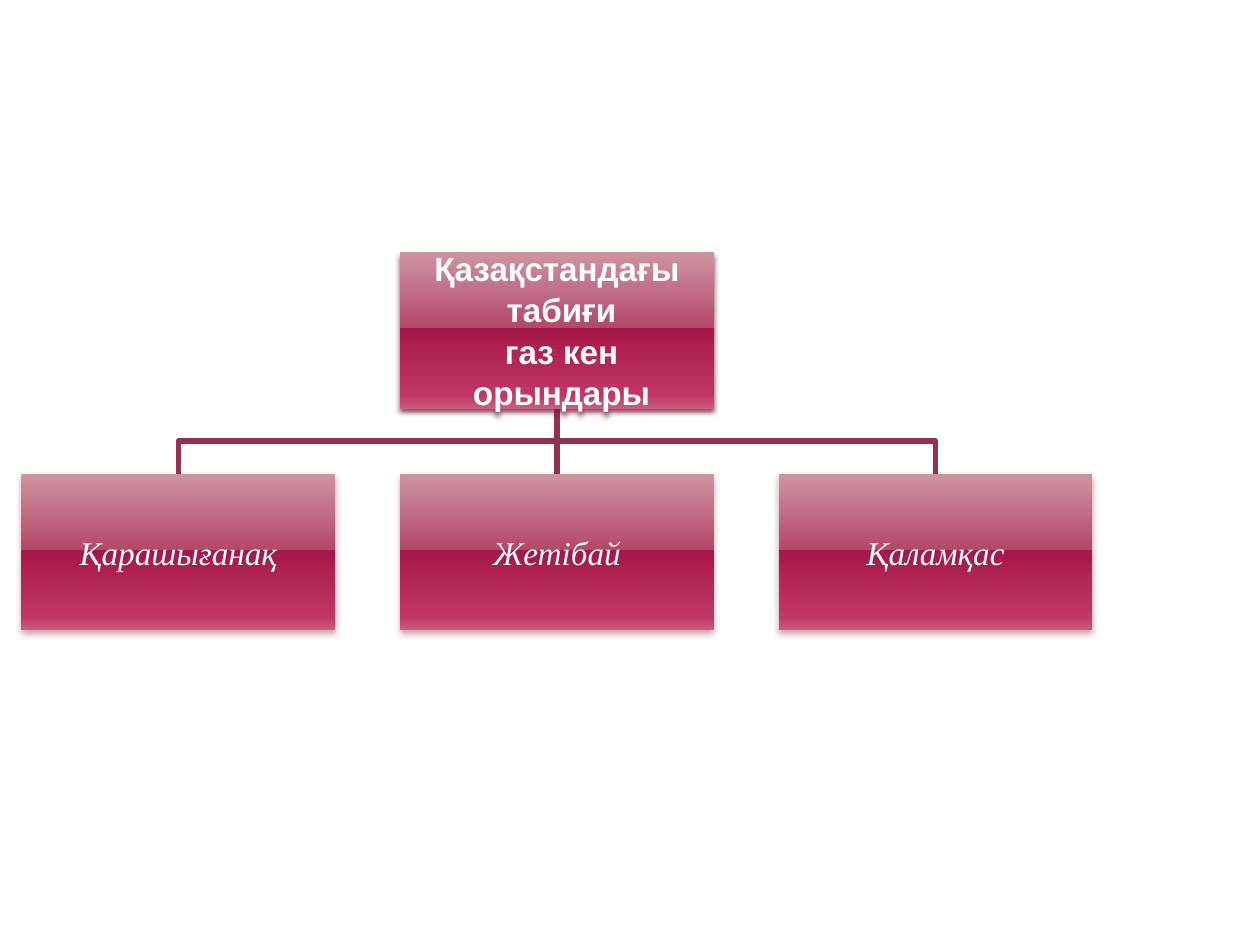
from lxml.etree import SubElement
from pptx import Presentation
from pptx.dml.color import RGBColor as Rgb
from pptx.enum.shapes import MSO_CONNECTOR as Conn, MSO_SHAPE as Kind
from pptx.enum.text import MSO_ANCHOR as Anchor, PP_ALIGN as Align
from pptx.oxml.ns import qn
from pptx.util import Inches, Pt

HUES = {"line": "933153", "text": "FFFFFF", "root": "722640", "leaf": "7F1238"}
STOPS = [(0, "CE94A2"), (49, "B34869"), (49, "A61749"), (92, "C13764"), (100, "CA5D7C")]
ROOT = ["Қазақстандағы", " табиғи", " газ кен", " орындары"]
LEAVES = ["Қарашығанақ", "Жетібай", "Қаламқас"]


def write(frame, lines, font="Arial", size=19, hue="text", bold=False, italic=False, gap=0.8):
    frame.word_wrap = True
    frame.vertical_anchor = Anchor.MIDDLE
    frame.margin_left = frame.margin_right = Inches(0.01)
    frame.margin_top = frame.margin_bottom = Inches(0.01)
    for i, line in enumerate(lines):
        para = frame.add_paragraph() if i else frame.paragraphs[0]
        para.alignment = Align.CENTER
        para.space_before = Pt(gap if i else 0)
        run = para.add_run()
        run.text = line
        run.font.name, run.font.size = font, Pt(size)
        run.font.bold, run.font.italic = bold, italic
        run.font.color.rgb = Rgb.from_string(HUES[hue])


class Chart:
    """Draws a tree of boxes on a grid of columns and rows."""

    left, top = 0.17, 2
    wide, high = 2.49, 1.24
    step, drop = 3.005, 1.76

    def __init__(self, deck):
        self.slide = deck.slides.add_slide(deck.slide_layouts[6])
        self.shapes = self.slide.shapes

    def spot(self, col, row):
        return Inches(self.left + col * self.step), Inches(self.top + row * self.drop)

    def ink(self, line):
        line.color.rgb = Rgb.from_string(HUES["line"])
        line.width = Pt(3.15)

    def elbow(self, start, end):
        half = Inches(self.wide / 2)
        x, y = self.spot(*start)
        x, y = x + half, y + Inches(self.high)
        tox, toy = self.spot(*end)
        tox, mid = tox + half, (y + toy) // 2
        path = self.shapes.build_freeform(x, y)
        path.add_line_segments([(x, mid), (tox, mid), (tox, toy)], close=False)
        shape = path.convert_to_shape()
        shape.fill.background()
        shape.shadow.inherit = False
        self.ink(shape.line)

    def link(self):
        line = self.shapes.add_connector(Conn.STRAIGHT, 0, 0, 0, 0)
        self.ink(line.line)
        SubElement(line._element.spPr, qn("a:effectLst"))
        return line

    def box(self, col, row, lines, shade="leaf", alpha=38, blur=4, **style):
        shape = self.shapes.add_shape(
            Kind.RECTANGLE, *self.spot(col, row), Inches(self.wide), Inches(self.high))
        shape.line.fill.background()
        self.blend(shape)
        self.cast(shape, shade, alpha, blur)
        write(shape.text_frame, lines, **style)
        return shape

    def blend(self, shape):
        shape.fill.gradient()
        shape.fill.gradient_angle = 270
        stops = shape._element.spPr.find(".//" + qn("a:gsLst"))
        for old in list(stops):
            stops.remove(old)
        for share, hue in STOPS:
            stop = SubElement(stops, qn("a:gs"), pos=str(share * 1000))
            SubElement(stop, qn("a:srgbClr"), val=hue)

    def cast(self, shape, hue, alpha, blur):
        shape.shadow.inherit = False
        fx = shape._element.spPr.find(qn("a:effectLst"))
        shade = SubElement(fx, qn("a:outerShdw"), blurRad=str(Pt(blur)),
                           dist=str(Pt(2)), dir="5400000", rotWithShape="0")
        tint = SubElement(shade, qn("a:srgbClr"), val=HUES[hue])
        SubElement(tint, qn("a:alpha"), val=str(alpha * 1000))


def main():
    deck = Presentation()
    deck.slide_width, deck.slide_height = Inches(10), Inches(7.5)
    chart = Chart(deck)
    chart.elbow((1, 0), (2, 1))
    stem = chart.link()
    chart.elbow((1, 0), (0, 1))
    root = chart.box(1, 0, ROOT, shade="root", alpha=83, blur=3.1, bold=True)
    leaves = [chart.box(col, 1, [name], font="Times New Roman", italic=True)
              for col, name in enumerate(LEAVES)]
    stem.begin_connect(root, 2)
    stem.end_connect(leaves[1], 0)
    deck.save("out.pptx")


if __name__ == "__main__":
    main()
